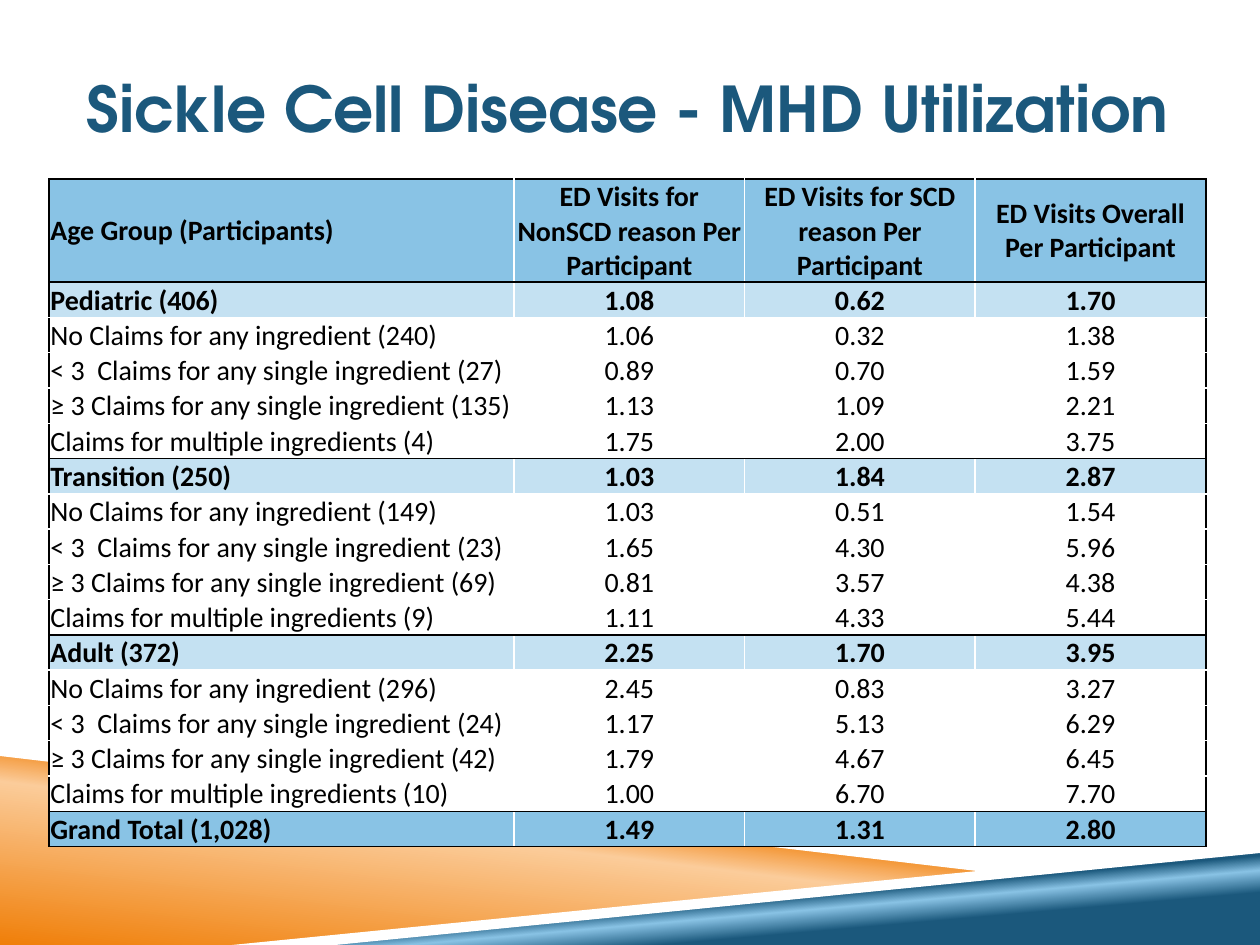
"""Build the sickle cell disease utilization slide."""
import pptx
import pptx.dml.color
import pptx.enum.text
import pptx.oxml
import pptx.oxml.ns
import pptx.util

Inches = pptx.util.Inches
Pt = pptx.util.Pt
ALIGN = pptx.enum.text.PP_ALIGN
MIDDLE = pptx.enum.text.MSO_ANCHOR.MIDDLE
NAMESPACE = pptx.oxml.ns.nsdecls("a")

HEADINGS = [
    "Age Group (Participants)",
    "ED Visits for NonSCD reason Per Participant",
    "ED Visits for SCD reason Per Participant",
    "ED Visits Overall Per Participant",
]
CLAIM_LEVELS = [
    "No Claims for any ingredient",
    "< 3  Claims for any single ingredient",
    "≥ 3 Claims for any single ingredient",
    "Claims for multiple ingredients",
]
AGE_GROUPS = [
    ("Pediatric (406)", "1.08 0.62 1.70", [
        (240, "1.06 0.32 1.38"), (27, "0.89 0.70 1.59"),
        (135, "1.13 1.09 2.21"), (4, "1.75 2.00 3.75")]),
    ("Transition (250)", "1.03 1.84 2.87", [
        (149, "1.03 0.51 1.54"), (23, "1.65 4.30 5.96"),
        (69, "0.81 3.57 4.38"), (9, "1.11 4.33 5.44")]),
    ("Adult (372)", "2.25 1.70 3.95", [
        (296, "2.45 0.83 3.27"), (24, "1.17 5.13 6.29"),
        (42, "1.79 4.67 6.45"), (10, "1.00 6.70 7.70")]),
]
GRAND_TOTAL = ("Grand Total (1,028)", "1.49 1.31 2.80")


def colour(value):
    return pptx.dml.color.RGBColor.from_string(value)


def write_text(text_frame, text, *, font, size, fill, bold=False, align=ALIGN.LEFT):
    paragraph = text_frame.paragraphs[0]
    paragraph.alignment = align
    run = paragraph.add_run()
    run.text = text
    run.font.name = font
    run.font.size = Pt(size)
    run.font.bold = bold
    run.font.color.rgb = colour(fill)


def utilization_rows():
    rows = [("strong", HEADINGS)]
    for group, totals, details in AGE_GROUPS:
        rows.append(("group", [group, *totals.split()]))
        for level, (count, visits) in zip(CLAIM_LEVELS, details):
            rows.append(("detail", [f"{level} ({count})", *visits.split()]))
    label, totals = GRAND_TOTAL
    rows.append(("strong", [label, *totals.split()]))
    return rows


class SlideBuilder:
    title_font = "TeX Gyre Adventor"
    body_font = "Calibri"
    black = "000000"
    white = "FFFFFF"
    navy = "1B587C"
    sky = "89C3E5"
    orange = "F07F09"
    peach = "FBCC9A"
    row_fills = {"strong": sky, "group": "C4E1F2", "detail": white}

    def __init__(self, slide):
        self.slide = slide

    def band(self, points, fill=None, stops=(), angle=0):
        corners = [(Inches(x), Inches(y)) for x, y in points]
        builder = self.slide.shapes.build_freeform(*corners[0])
        builder.add_line_segments(corners[1:], close=True)
        shape = builder.convert_to_shape()
        shape.shadow.inherit = False
        shape.line.fill.background()
        if fill:
            shape.fill.solid()
            shape.fill.fore_color.rgb = colour(fill)
        else:
            self.gradient(shape, stops, angle)

    def gradient(self, shape, stops, angle):
        shape.fill.gradient()
        gradient = shape._element.spPr.find(pptx.oxml.ns.qn("a:gradFill"))
        stop_xml = "".join(
            f'<a:gs pos="{position * 1000}"><a:srgbClr val="{colour(value)}"/></a:gs>'
            for position, value in stops)
        replacement = pptx.oxml.parse_xml(
            f'<a:gradFill {NAMESPACE} rotWithShape="1"><a:gsLst>{stop_xml}</a:gsLst>'
            f'<a:lin ang="{angle * 60000}" scaled="0"/></a:gradFill>')
        gradient.getparent().replace(gradient, replacement)

    def title(self, text, left, top, width, height):
        box = self.slide.shapes.add_textbox(
            Inches(left), Inches(top), Inches(width), Inches(height))
        frame = box.text_frame
        frame.word_wrap = True
        frame.vertical_anchor = MIDDLE
        frame.margin_left = frame.margin_right = 0
        write_text(frame, text, font=self.title_font, size=36, fill=self.navy,
                   bold=True, align=ALIGN.CENTER)

    def border(self, cell, side, value):
        cell._tc.get_or_add_tcPr().append(pptx.oxml.parse_xml(
            f'<a:ln{side} {NAMESPACE} w="{Pt(1)}"><a:solidFill>'
            f'<a:srgbClr val="{colour(value)}"/></a:solidFill></a:ln{side}>'))

    def cell(self, cell, text, kind, align, dark_sides):
        for side in "LRTB":
            self.border(cell, side, self.black if side in dark_sides else self.white)
        cell.fill.solid()
        cell.fill.fore_color.rgb = colour(self.row_fills[kind])
        cell.vertical_anchor = MIDDLE
        cell.margin_left = cell.margin_right = cell.margin_top = Inches(0.01)
        cell.margin_bottom = 0
        write_text(cell.text_frame, text, font=self.body_font, size=16,
                   fill=self.black, bold=kind != "detail", align=align)

    def table(self, rows, left, top, column_widths, header_height, row_height):
        heights = [header_height] + [row_height] * (len(rows) - 1)
        table = self.slide.shapes.add_table(
            len(rows), len(column_widths), Inches(left), Inches(top),
            Inches(sum(column_widths)), Inches(sum(heights))).table
        table.first_row = table.horz_banding = False
        for column, width in zip(table.columns, column_widths):
            column.width = Inches(width)
        for row, height in zip(table.rows, heights):
            row.height = Inches(height)
        last_column = len(column_widths) - 1
        following_kinds = [kind for kind, _ in rows[1:]] + ["strong"]
        for row_index, (kind, values) in enumerate(rows):
            row_sides = "T" if kind != "detail" else ""
            row_sides += "B" if following_kinds[row_index] != "detail" else ""
            for column_index, text in enumerate(values):
                sides = row_sides + {0: "L", last_column: "R"}.get(column_index, "")
                align = ALIGN.CENTER if column_index else ALIGN.LEFT
                self.cell(table.cell(row_index, column_index), text, kind, align, sides)


def main():
    presentation = pptx.Presentation()
    presentation.slide_width = Inches(10)
    presentation.slide_height = Inches(7.5)
    builder = SlideBuilder(presentation.slides.add_slide(presentation.slide_layouts[6]))
    builder.band(
        [(0, 5.97), (7.92, 6.92), (2, 7.5), (0, 7.5)], angle=277,
        stops=[(0, builder.orange), (52, builder.peach), (66, builder.orange)])
    builder.band(
        [(1.98, 7.5), (10, 6.72), (10, 7.5)], angle=265,
        stops=[(28, builder.navy), (40, builder.sky), (48, builder.navy)])
    builder.band([(0, 5.92), (0, 6), (7.9, 6.93), (8.32, 6.9)], fill=builder.white)
    builder.band([(10, 6.69), (1.84, 7.5), (2.66, 7.5), (10, 6.77)], fill=builder.white)
    builder.title("Sickle Cell Disease - MHD Utilization", 0.67, 0.37, 8.62, 0.96)
    builder.table(utilization_rows(), 0.39, 1.42, [3.69, 1.83, 1.83, 1.83], 0.82, 0.28)
    presentation.save("out.pptx")


if __name__ == "__main__":
    main()
